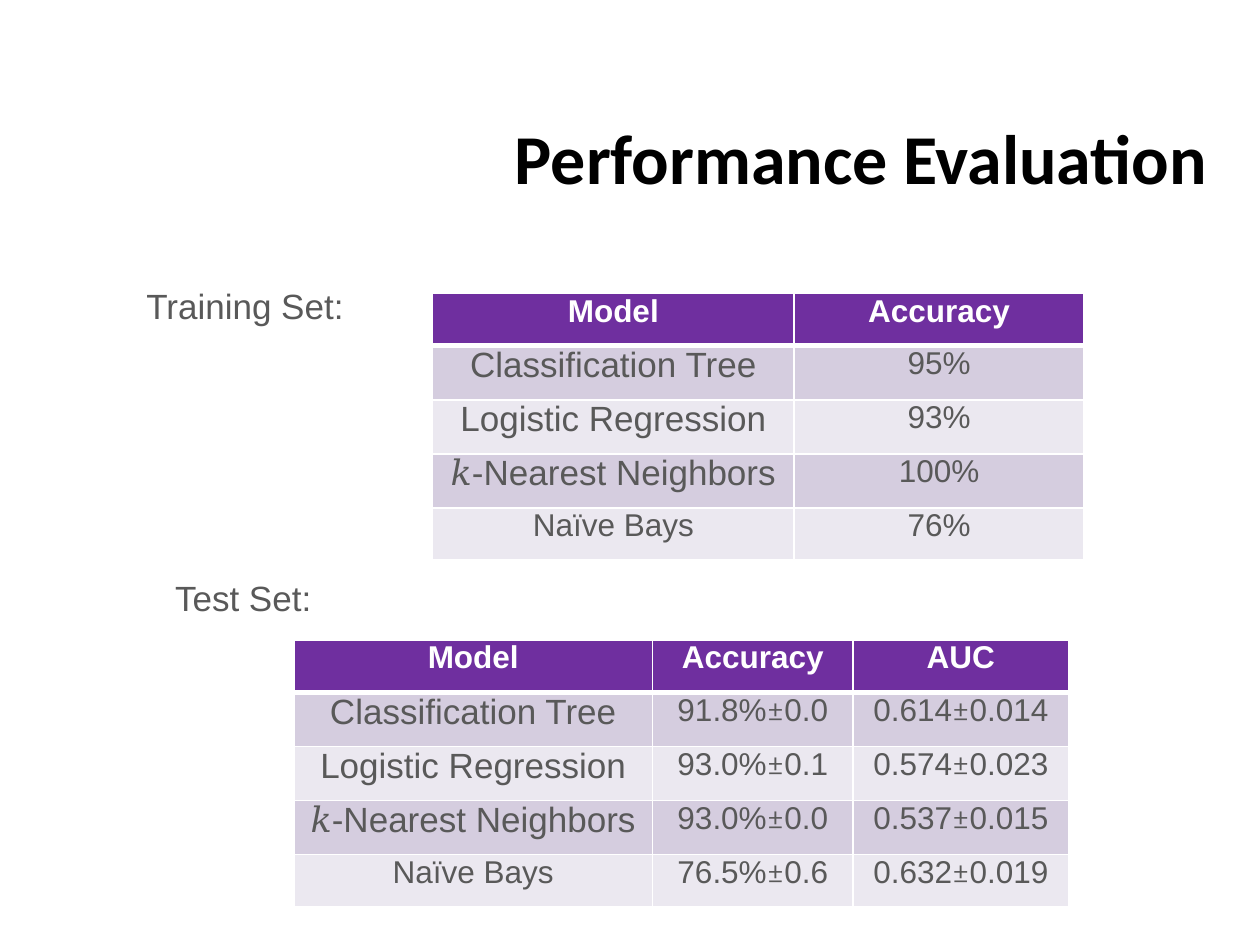
"""Build the performance evaluation slide with its two result tables."""
from dataclasses import dataclass
from itertools import groupby

import pptx
import pptx.dml.color
import pptx.enum.text
import pptx.oxml
import pptx.oxml.ns
import pptx.util

Cm = pptx.util.Cm
Pt = pptx.util.Pt
RGBColor = pptx.dml.color.RGBColor
Align = pptx.enum.text.PP_ALIGN
Anchor = pptx.enum.text.MSO_ANCHOR

BLACK = RGBColor(0x00, 0x00, 0x00)
WHITE = RGBColor(0xFF, 0xFF, 0xFF)
GREY = RGBColor(0x59, 0x59, 0x59)
PURPLE = RGBColor(0x6F, 0x2F, 0x9F)
BANDS = (RGBColor(0xEB, 0xE8, 0xF0), RGBColor(0xD5, 0xCD, 0xDF))
MATH = "𝑘±"
ROWS = (1.05, 1.09, 1.09, 1.09, 1.05)
MODELS = (
    "Classification Tree",
    "Logistic Regression",
    "𝑘-Nearest Neighbors",
    "Naïve Bays",
)


@dataclass
class Label:
    text: str
    left: float
    top: float
    width: float


@dataclass
class Grid:
    left: float
    top: float
    cols: tuple[float, ...]
    heads: tuple[str, ...]
    scores: tuple[tuple[str, ...], ...]


LABELS = (
    Label("Training Set:", 2.95, 5.74, 4.06),
    Label("Test Set:", 3.53, 11.63, 2.9),
)
GRIDS = (
    Grid(
        8.72, 5.92, (7.29, 5.84), ("Model", "Accuracy"),
        (("95%",), ("93%",), ("100%",), ("76%",)),
    ),
    Grid(
        5.93, 12.91, (7.22, 4.05, 4.34), ("Model", "Accuracy", "AUC"),
        (
            ("91.8%±0.0", "0.614±0.014"),
            ("93.0%±0.1", "0.574±0.023"),
            ("93.0%±0.0", "0.537±0.015"),
            ("76.5%±0.6", "0.632±0.019"),
        ),
    ),
)


def add_text(para, text: str, size: int, color: RGBColor,
             bold: bool = False, face: str = "Arial") -> None:
    """Add the text in runs, with math signs in Cambria."""
    for math, chars in groupby(text, lambda char: char in MATH):
        run = para.add_run()
        run.text = "".join(chars)
        run.font.name = "Cambria" if math else face
        run.font.size = Pt(size)
        run.font.bold = bold
        run.font.color.rgb = color


def clear_pad(box) -> None:
    """Remove the inner margins of a cell or text frame."""
    box.margin_left = box.margin_right = 0
    box.margin_top = box.margin_bottom = 0


def add_edges(cell, row: int) -> None:
    """Draw white cell edges, thick below the head row."""
    widths = {"L": 1, "R": 1, "T": 3 if row == 1 else 1, "B": 1 if row else 3}
    props = cell._tc.get_or_add_tcPr()
    for side, width in widths.items():
        props.append(pptx.oxml.parse_xml(
            f'<a:ln{side} {pptx.oxml.ns.nsdecls("a")} w="{Pt(width)}">'
            f'<a:solidFill><a:srgbClr val="{WHITE}"/></a:solidFill></a:ln{side}>'
        ))


def add_label(slide, label: Label) -> None:
    """Place the name of a data set."""
    box = slide.shapes.add_textbox(
        Cm(label.left), Cm(label.top), Cm(label.width), Cm(0.79))
    frame = box.text_frame
    frame.word_wrap = True
    clear_pad(frame)
    add_text(frame.paragraphs[0], label.text, 20, GREY)


def add_grid(slide, grid: Grid) -> None:
    """Place one table of model scores."""
    lines = [grid.heads]
    lines += [(name, *vals) for name, vals in zip(MODELS, grid.scores)]
    table = slide.shapes.add_table(
        len(lines), len(grid.cols), Cm(grid.left), Cm(grid.top),
        Cm(sum(grid.cols)), Cm(sum(ROWS))).table
    for col, width in zip(table.columns, grid.cols):
        col.width = Cm(width)
    for row, (height, line) in enumerate(zip(ROWS, lines)):
        table.rows[row].height = Cm(height)
        for col, text in enumerate(line):
            cell = table.cell(row, col)
            clear_pad(cell)
            add_edges(cell, row)
            cell.fill.solid()
            cell.fill.fore_color.rgb = BANDS[row % 2] if row else PURPLE
            para = cell.text_frame.paragraphs[0]
            para.alignment = Align.CENTER
            large = col == 0 and 0 < row < len(MODELS)
            add_text(para, text, 20 if large else 18,
                     GREY if row else WHITE, bold=row == 0)


def main() -> None:
    """Build and save the slide."""
    deck = pptx.Presentation()
    deck.slide_width, deck.slide_height = Cm(25.4), Cm(19.05)
    slide = deck.slides.add_slide(deck.slide_layouts[5])
    title = slide.shapes.title
    title.left, title.top = Cm(7.01), Cm(1.57)
    title.width, title.height = Cm(17.58), Cm(3.18)
    title.text_frame.vertical_anchor = Anchor.MIDDLE
    para = title.text_frame.paragraphs[0]
    para.alignment = Align.RIGHT
    add_text(para, "Performance Evaluation", 40, BLACK, True, "Calibri")
    for label in LABELS:
        add_label(slide, label)
    for grid in GRIDS:
        add_grid(slide, grid)
    deck.save("out.pptx")


if __name__ == "__main__":
    main()
